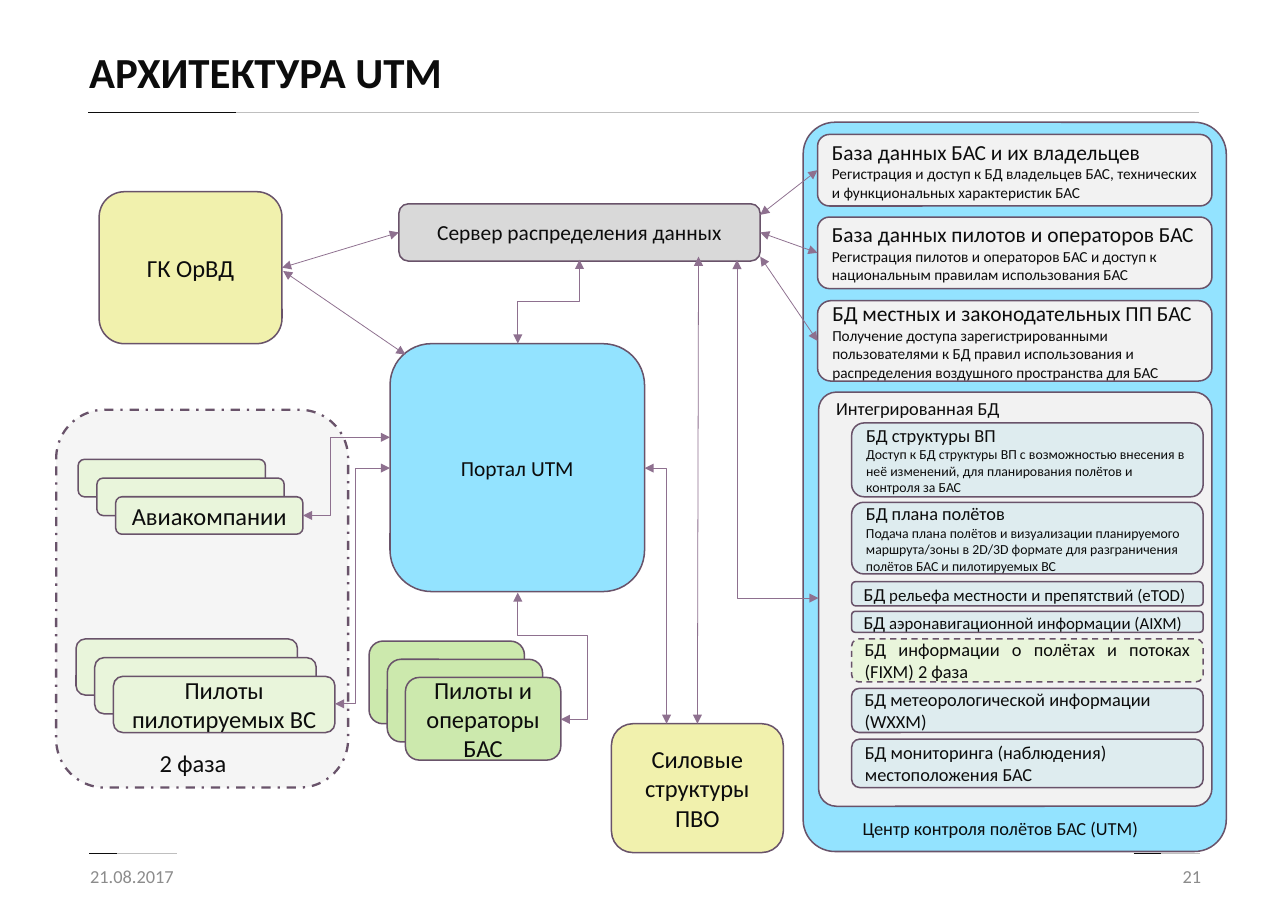
from lxml import etree
from pptx import Presentation
from pptx.dml.color import RGBColor
from pptx.enum import dml, shapes, text
from pptx.oxml import ns
from pptx.util import Inches, Pt

INK = RGBColor(0x0C, 0x0C, 0x0C)
GREY = RGBColor(0x8C, 0x8C, 0x8C)
RULE = RGBColor(0xBF, 0xBF, 0xBF)
EDGE = RGBColor(0x69, 0x53, 0x6A)
ARROW = RGBColor(0x8E, 0x70, 0x8F)
BLUE = RGBColor(0x93, 0xE3, 0xFF)
SILVER = RGBColor(0xD9, 0xD9, 0xD9)
PALE = RGBColor(0xF2, 0xF2, 0xF2)
YELLOW = RGBColor(0xF1, 0xF1, 0xAD)
GREEN = RGBColor(0xCC, 0xE9, 0xAD)
MINT = RGBColor(0xE9, 0xF5, 0xDB)
MIST = RGBColor(0xDE, 0xEC, 0xEF)

LEFT, CENTER = text.PP_ALIGN.LEFT, text.PP_ALIGN.CENTER
RIGHT, JUSTIFY = text.PP_ALIGN.RIGHT, text.PP_ALIGN.JUSTIFY
MIDDLE = text.MSO_ANCHOR.MIDDLE
TOP = text.MSO_ANCHOR.TOP


def add(parent, tag, **attrs):
    return etree.SubElement(parent, ns.qn(tag), attrs)


class Board:
    face = "Calibri"

    def __init__(self, slide):
        self.slide = slide
        self.items = slide.shapes

    def put(self, frame, lines, align=LEFT, color=INK, anchor=MIDDLE):
        """Each line is (text, size) or (text, size, tail, tail size)."""
        frame.word_wrap = True
        frame.vertical_anchor = anchor
        for i, (words, size, *tail) in enumerate(lines):
            para = frame.add_paragraph() if i else frame.paragraphs[0]
            para.alignment = align
            para.add_run().text = words
            para.font.name, para.font.size = self.face, Pt(size)
            para.font.color.rgb = color
            if tail:
                run = para.add_run()
                run.text, run.font.size = tail[0], Pt(tail[1])

    def title(self, at, words):
        box = self.items.title
        box.left, box.top, box.width, box.height = map(Inches, at)
        self.put(box.text_frame, [(words, 28)])
        para = box.text_frame.paragraphs[0]
        para.font.bold = True
        para.line_spacing = 0.9

    def label(self, at, words, size, **style):
        box = self.items.add_textbox(*map(Inches, at))
        self.put(box.text_frame, [(words, size)], **style)

    def box(self, at, fill, lines=(), align=CENTER, bend=None, dash=None,
            width=1):
        box = self.items.add_shape(
            shapes.MSO_SHAPE.ROUNDED_RECTANGLE, *map(Inches, at))
        box.shadow.inherit = False
        box.fill.solid()
        box.fill.fore_color.rgb = fill
        box.line.color.rgb = EDGE
        box.line.width = Pt(width)
        if dash:
            box.line.dash_style = dash
        if bend:
            box.adjustments[0] = bend
        self.put(box.text_frame, lines, align)
        return box

    def stack(self, at, step, fill, words):
        x, y, w, h = at
        for i in range(3):
            lines = [(words, 16)] if i == 2 else []
            self.box((x + i * step, y + i * step, w, h), fill, lines)

    def line(self, ends, color, kind=shapes.MSO_CONNECTOR.STRAIGHT):
        line = self.items.add_connector(kind, *map(Inches, ends))
        line.line.color.rgb = color
        line.line.width = Pt(0.5)
        add(line._element.spPr, "a:effectLst")
        return line

    def rule(self, x, y, width, dark):
        for size, color in ((width, RULE), (dark, INK)):
            self.line((x, y, x + size, y), color)

    def heads(self, line):
        ln = line.line._get_or_add_ln()
        for tag in ("a:headEnd", "a:tailEnd"):
            add(ln, tag, type="triangle")

    def arrow(self, ends, start=None, stop=None):
        line = self.line(ends, ARROW)
        self.heads(line)
        if start:
            line.begin_connect(*start)
        if stop:
            line.end_connect(*stop)

    def elbow(self, ends, turn=0, folds=()):
        """Ends are as seen; a turn of 90 or 270 makes it leave upright."""
        x1, y1, x2, y2 = ends
        if turn:
            cx, cy = (x1 + x2) / 2, (y1 + y2) / 2
            sign = 1 if turn == 90 else -1
            dx, dy = sign * (y1 - cy), sign * (cx - x1)
            ends = cx + dx, cy + dy, cx - dx, cy - dy
        line = self.line(ends, ARROW, shapes.MSO_CONNECTOR.ELBOW)
        self.heads(line)
        props = line._element.spPr
        if turn:
            props.find(ns.qn("a:xfrm")).set("rot", str(turn * 60000))
        geom = props.find(ns.qn("a:prstGeom"))
        geom.set("prst", f"bentConnector{len(folds) + 2}")
        guides = geom.find(ns.qn("a:avLst"))
        if guides is None:
            guides = add(geom, "a:avLst")
        for i, fold in enumerate(folds, 1):
            add(guides, "a:gd", name=f"adj{i}",
                fmla=f"val {round(fold * 100000)}")


def main():
    deck = Presentation()
    deck.slide_width, deck.slide_height = Inches(11.69), Inches(8.27)
    board = Board(deck.slides.add_slide(deck.slide_layouts[5]))

    # Title, rules and footer
    board.title((0.71, 0.28, 7.97, 0.8), "АРХИТЕКТУРА UTM")
    board.rule(0.8, 1.02, 10.08, 1.34)
    board.rule(10.29, 7.75, 0.6, 0.25)
    board.rule(0.81, 7.75, 0.8, 0.25)
    board.label((0.72, 7.73, 2.63, 0.44), "21.08.2017", 12, color=GREY)
    board.label((8.37, 7.73, 2.63, 0.44), "21", 12, color=GREY, align=RIGHT)

    # Second phase frame
    phase = board.box((0.51, 3.72, 2.65, 3.43), SILVER, width=1.5,
                      dash=dml.MSO_LINE.DASH_DOT)
    tone = phase.fill._xPr.find(ns.qn("a:solidFill"))[0]
    add(tone, "a:alpha", val="24000")
    board.label((1.35, 6.74, 0.97, 0.37), "2 фаза", 16, anchor=TOP)

    # Control centre
    board.box((7.29, 1.11, 3.84, 6.62), BLUE, bend=0.075)
    board.label((7.73, 7.37, 3.08, 0.3), "Центр контроля полётов БАС (UTM)",
                12, anchor=TOP)
    bases = [
        board.box((7.42, y, 3.58, h), PALE, [(head, 14), (note, 10)], LEFT)
        for y, h, head, note in (
            (1.22, 0.65, "База данных БАС и их владельцев",
             "Регистрация и доступ к БД владельцев БАС, технических "
             "и функциональных характеристик БАС"),
            (1.97, 0.65, "База данных пилотов и операторов БАС",
             "Регистрация пилотов и операторов БАС и доступ к "
             "национальным правилам использования БАС"),
            (2.73, 0.73, "БД местных и законодательных ПП БАС",
             "Получение доступа зарегистрированными пользователями к БД "
             "правил использования и распределения воздушного "
             "пространства для БАС"))]

    # Integrated database
    board.box((7.43, 3.56, 3.57, 3.76), PALE, bend=0.045)
    board.label((7.49, 3.56, 3.08, 0.3), "Интегрированная БД", 12, anchor=TOP)
    for y, h, *lines in (
            (3.84, 0.67, ("БД структуры ВП", 12),
             ("Доступ к БД структуры ВП с возможностью внесения в неё "
              "изменений, для планирования полётов и контроля за БАС", 9)),
            (4.56, 0.65, ("БД плана полётов", 12),
             ("Подача плана полётов и визуализации планируемого "
              "маршрута/зоны в 2D/3D формате для разграничения полётов "
              "БАС и пилотируемых ВС", 9)),
            (5.28, 0.22,
             ("БД", 12, " рельефа местности и препятствий (eTOD)", 11)),
            (5.55, 0.19,
             ("БД", 12, " аэронавигационной информации (AIXM)", 11)),
            (6.25, 0.4, ("БД метеорологической информации (WXXM)", 12)),
            (6.71, 0.44,
             ("БД мониторинга (наблюдения) местоположения БАС", 12))):
        board.box((7.73, y, 3.19, h), MIST, lines, LEFT)
    board.box((7.73, 5.8, 3.19, 0.39), MINT,
              [("БД информации о полётах и потоках (FIXM) 2 фаза", 12)],
              JUSTIFY, dash=dml.MSO_LINE.DASH)

    # Portal, server and services
    board.box((3.54, 3.12, 2.31, 2.25), BLUE, [("Портал UTM", 14)])
    server = board.box((3.62, 1.85, 3.28, 0.52), SILVER,
                       [("Сервер распределения данных", 14)])
    control = board.box((0.9, 1.74, 1.66, 1.38), YELLOW, [("ГК ОрВД", 16)])
    force = board.box((5.55, 6.57, 1.56, 1.17), YELLOW,
                      [("Силовые структуры", 16), ("ПВО", 16)])

    # Users
    board.stack((3.35, 5.82, 1.41, 0.75), 0.165, GREEN,
                "Пилоты и операторы БАС")
    board.stack((0.71, 4.17, 1.7, 0.34), 0.17, MINT, "Авиакомпании")
    board.stack((0.69, 5.8, 2.01, 0.51), 0.17, MINT, "Пилоты пилотируемых ВС")

    # Straight arrows
    board.arrow((2.56, 2.43, 3.62, 2.11), (control, 3), (server, 1))
    board.arrow((2.57, 2.46, 3.68, 3.22))
    board.arrow((6.9, 1.95, 7.42, 1.55), stop=(bases[0], 1))
    board.arrow((6.9, 2.11, 7.42, 2.3), (server, 3), (bases[1], 1))
    board.arrow((6.9, 2.33, 7.42, 3.09), stop=(bases[2], 1))
    board.arrow((6.34, 2.33, 6.33, 6.57), stop=(force, 0))

    # Bent arrows
    board.elbow((4.7, 3.12, 5.26, 2.36), 90, [0.5])
    board.elbow((5.09, 6.53, 4.7, 5.38), folds=[-0.63, 0.66])
    board.elbow((3.04, 6.39, 3.54, 4.25), folds=[0.38])
    board.elbow((2.75, 4.68, 3.54, 3.97), folds=[0.32])
    board.elbow((6.69, 2.36, 7.43, 5.43), 270)
    board.elbow((6.05, 6.57, 5.85, 4.25), 270)

    deck.save("out.pptx")


if __name__ == "__main__":
    main()
